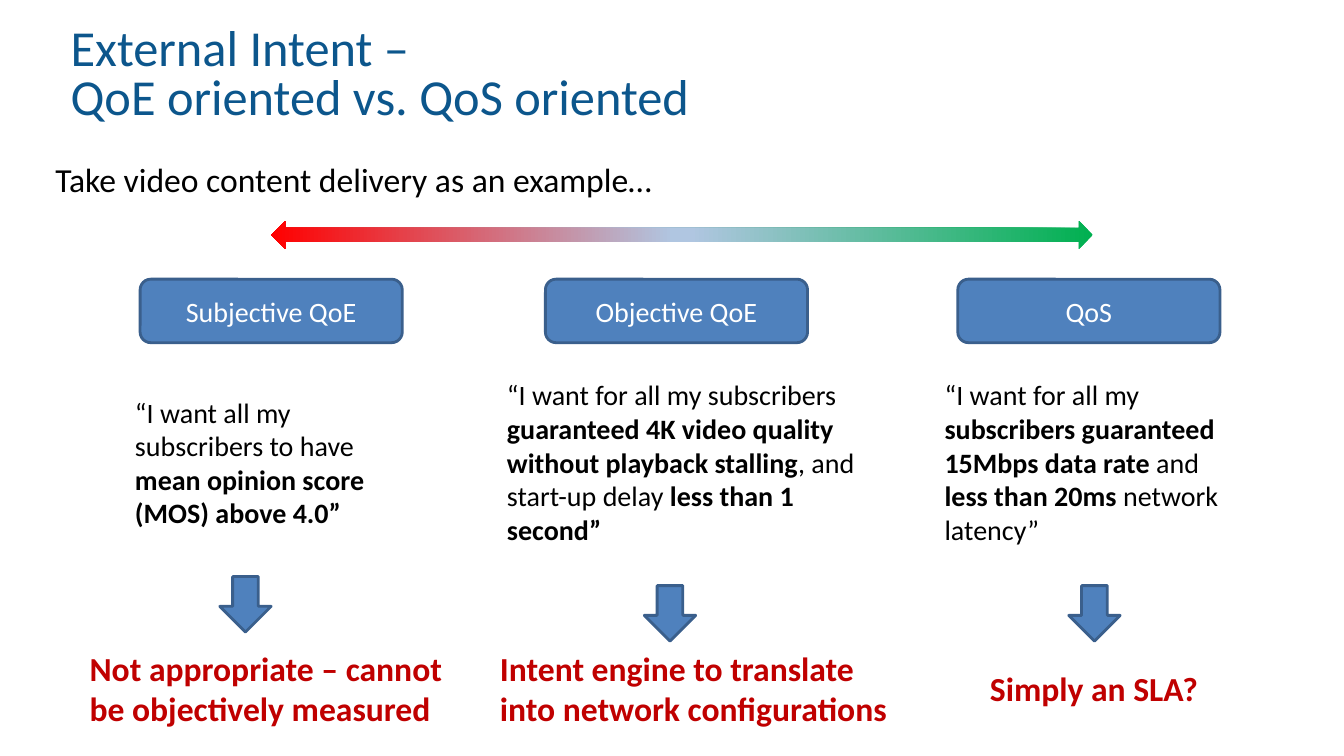
from dataclasses import dataclass

from lxml import etree
from pptx import Presentation
from pptx.dml.color import RGBColor
from pptx.enum.shapes import MSO_SHAPE
from pptx.enum.text import MSO_ANCHOR, MSO_AUTO_SIZE, PP_ALIGN
from pptx.oxml.ns import qn
from pptx.util import Emu, Pt

PX = 9144  # EMU per px, 100 px to the inch
TITLE_ONLY = 5
ROUNDED, DOWN, SPECTRUM = (MSO_SHAPE.ROUNDED_RECTANGLE, MSO_SHAPE.DOWN_ARROW,
                           MSO_SHAPE.LEFT_RIGHT_ARROW)
LEFT, CENTER = PP_ALIGN.LEFT, PP_ALIGN.CENTER
TOP, MIDDLE = MSO_ANCHOR.TOP, MSO_ANCHOR.MIDDLE
FIXED, GROW = MSO_AUTO_SIZE.NONE, MSO_AUTO_SIZE.SHAPE_TO_FIT_TEXT


@dataclass(frozen=True)
class Theme:
    font: str = "Calibri"
    title: str = "0C568C"
    text: str = "000000"
    on_fill: str = "FFFFFF"
    fill: str = "4F81BD"
    outline: str = "3A5F8C"
    verdict: str = "C00000"
    spectrum: tuple = ((0, "00B050"), (49, "B0C6E1"), (51, "B0C6E1"), (100, "FF0000"))
    title_size: int = 36
    lead_size: int = 24
    body_size: int = 20
    title_spacing: int = 35
    outline_width: int = 2


def write(frame, text, *, font, size, color, bold=False, align=LEFT, anchor=TOP,
          wrap=True, fit=FIXED, spacing=None):
    """Fill a frame: \\n parts paragraphs, \\v breaks a line, ** toggles bold."""
    frame.word_wrap, frame.auto_size, frame.vertical_anchor = wrap, fit, anchor
    for number, line in enumerate(text.split("\n")):
        paragraph = frame.add_paragraph() if number else frame.paragraphs[0]
        paragraph.alignment = align
        if spacing:
            paragraph.line_spacing = Pt(spacing)
        for row, part in enumerate(line.split("\v")):
            if row:
                paragraph.add_line_break()
            for index, piece in enumerate(part.split("**")):
                if not piece:
                    continue
                run = paragraph.add_run()
                run.text = piece
                run.font.name, run.font.size = font, Pt(size)
                run.font.bold = bold or index % 2 == 1
                run.font.color.rgb = RGBColor.from_string(color)


class SlideBuilder:
    def __init__(self, slide, theme):
        self.slide, self.theme = slide, theme

    def title(self, text, box):
        title = self.slide.shapes.title
        title.left, title.top, title.width, title.height = (Emu(v * PX) for v in box)
        write(title.text_frame, text, font=self.theme.font, size=self.theme.title_size,
              color=self.theme.title, anchor=MIDDLE, spacing=self.theme.title_spacing)

    def text(self, text, box, **style):
        label = self.slide.shapes.add_textbox(*(Emu(v * PX) for v in box))
        style = {"size": self.theme.body_size, "color": self.theme.text, **style}
        write(label.text_frame, text, font=self.theme.font, fit=GROW, **style)

    def shape(self, kind, box):
        shape = self.slide.shapes.add_shape(kind, *(Emu(v * PX) for v in box))
        shape.shadow.inherit = False
        shape.fill.solid()
        shape.fill.fore_color.rgb = RGBColor.from_string(self.theme.fill)
        shape.line.color.rgb = RGBColor.from_string(self.theme.outline)
        shape.line.width = Pt(self.theme.outline_width)
        return shape

    def heading(self, text, box):
        write(self.shape(ROUNDED, box).text_frame, text, font=self.theme.font,
              size=self.theme.body_size, color=self.theme.on_fill,
              align=CENTER, anchor=MIDDLE)

    def spectrum(self, box):
        arrow = self.shape(SPECTRUM, box)
        arrow.line.fill.background()
        arrow.fill.gradient()
        arrow.fill.gradient_angle = 180
        stops = arrow.element.spPr.find(qn("a:gradFill")).find(qn("a:gsLst"))
        for stop in list(stops):
            stops.remove(stop)
        for percent, color in self.theme.spectrum:
            stop = etree.SubElement(stops, qn("a:gs"), pos=str(percent * 1000))
            etree.SubElement(stop, qn("a:srgbClr"), val=color)


# heading, its left; quote, its box; arrow left and top; verdict, its box, wrapped
INTENTS = [
    ("Subjective QoE", 139,
     "“I want all my subscribers to have **mean opinion score (MOS) above 4.0”**",
     (124, 387, 275, 145), (218, 572),
     "Not appropriate – cannot\nbe objectively measured", (79, 638, 381, 91), False),
    ("Objective QoE", 541,
     "“I want for all my subscribers **guaranteed 4K video quality without playback "
     "stalling**, and start-up delay **less than 1 second”**",
     (493, 370, 394, 178), (639, 581),
     "Intent engine to translate into network configurations",
     (486, 638, 409, 91), True),
    ("QoS", 950,
     "“I want for all my **subscribers guaranteed 15Mbps data rate **and "
     "**less than 20ms **network latency”",
     (927, 370, 307, 178), (1060, 581),
     "Simply an SLA?", (972, 658, 228, 50), False),
]


def main():
    deck = Presentation()
    deck.slide_width, deck.slide_height = Emu(1333 * PX), Emu(750 * PX)
    theme = Theme()
    builder = SlideBuilder(deck.slides.add_slide(deck.slide_layouts[TITLE_ONLY]), theme)

    builder.title("External Intent – \vQoE oriented vs. QoS oriented", (60, 13, 976, 126))
    builder.text("Take video content delivery as an example…", (45, 153, 618, 50),
                 size=theme.lead_size, wrap=False)
    builder.spectrum((269, 219, 815, 28))
    for name, left, quote, quote_box, arrow_at, verdict, verdict_box, wrap in INTENTS:
        builder.heading(name, (left, 277, 260, 63))
        builder.text(quote, quote_box)
        builder.shape(DOWN, (*arrow_at, 51, 55))
        builder.text(verdict, verdict_box, size=theme.lead_size, color=theme.verdict,
                     bold=True, wrap=wrap)
    deck.save("out.pptx")


if __name__ == "__main__":
    main()
